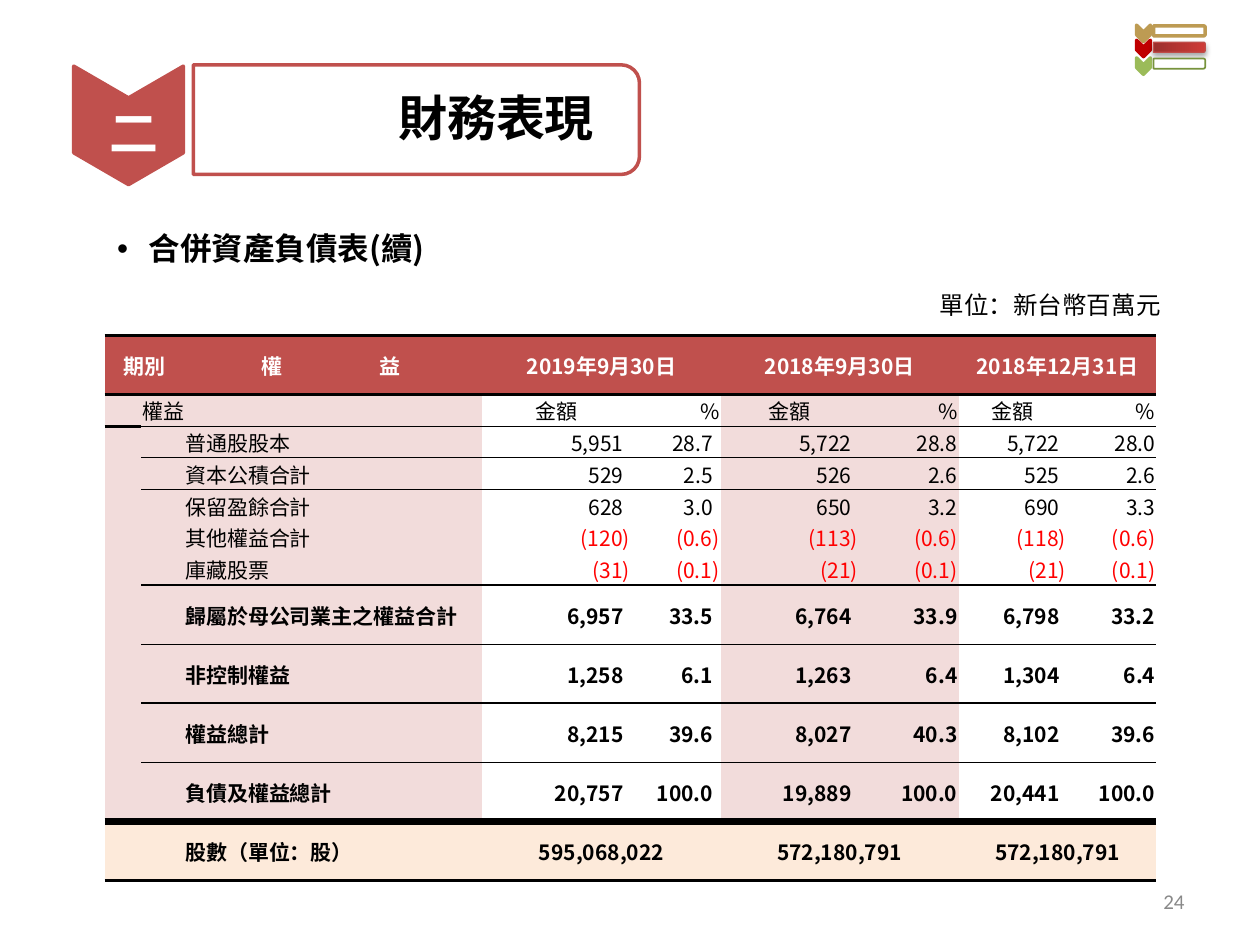
from lxml import etree
from pptx import Presentation
from pptx.dml.color import RGBColor
from pptx.enum import shapes, text
from pptx.oxml import parse_xml
from pptx.oxml.ns import nsdecls, qn
from pptx.util import Inches, Pt

FONT = "Noto Sans CJK SC"
RED, PINK, WHITE, BLACK = "C0504D", "F2DCDB", "FFFFFF", "000000"
CREAM, LOSS = "FDEADA", "FF0000"
LEFT, CENTER, RIGHT = (text.PP_ALIGN.LEFT, text.PP_ALIGN.CENTER, text.PP_ALIGN.RIGHT)
CHEVRON = shapes.MSO_SHAPE.CHEVRON
BAR = shapes.MSO_SHAPE.ROUND_2_SAME_RECTANGLE

COLS = [0.29, 0.34, 2.37, 1.18, 0.71, 1.1, 0.79, 0.86, 0.71]
COL_FILLS = [PINK] * 3 + [WHITE] * 2 + [PINK] * 2 + [WHITE] * 2
HEADER = ["期別", "", "權\t益", "2019年9月30日", "", "2018年9月30日", "", "2018年12月31日", ""]
SUBHEAD = ["", "權益", ""] + ["金額", "%"] * 3
ITEMS = [
    ("普通股股本", "5,951", "28.7", "5,722", "28.8", "5,722", "28.0"),
    ("資本公積合計", "529", "2.5", "526", "2.6", "525", "2.6"),
    ("保留盈餘合計", "628", "3.0", "650", "3.2", "690", "3.3"),
    ("其他權益合計", "(120)", "(0.6)", "(113)", "(0.6)", "(118)", "(0.6)"),
    ("庫藏股票", "(31)", "(0.1)", "(21)", "(0.1)", "(21)", "(0.1)"),
    ("歸屬於母公司業主之權益合計", "6,957", "33.5", "6,764", "33.9", "6,798", "33.2"),
    ("非控制權益", "1,258", "6.1", "1,263", "6.4", "1,304", "6.4"),
    ("權益總計", "8,215", "39.6", "8,027", "40.3", "8,102", "39.6"),
    ("負債及權益總計", "20,757", "100.0", "19,889", "100.0", "20,441", "100.0"),
]
SHARES = ["", "", "股數（單位：股）", "595,068,022", "", "572,180,791", "", "572,180,791", ""]
ROWS = [HEADER, SUBHEAD] + [["", "", *item] for item in ITEMS] + [SHARES]
LAST = len(ROWS) - 1
HEIGHTS = [0.47] + [0.24] * 6 + [0.47] * 5
RULES = {-1: 2, 0: 2, 1: 0.5, 2: 0.5, 6: 1, 7: 0.5, 8: 1, 9: 1, 10: 4, 11: 2}
FULL_RULES = (-1, 0, 10, 11)
MERGES = [(0, 0), (1, 1)] + [(r, c) for r in (0, LAST) for c in (3, 5, 7)]
PADDED_COLS = (3, 4, 5, 7)

ICON_CHEVRONS = [(0.21, "BD9B53"), (0.47, "9BBB59"), (0.33, "C00000")]
ICON_BARS = [(0.04, None, "BD9B53", 2), (0.17, RED, "BF4C48", 0.75), (0.3, WHITE, "77933C", 1)]


def rgb(value):
    return RGBColor.from_string(value)


def write(tf, words, size, color=BLACK, bold=False, align=LEFT, font=FONT, **para):
    p = tf.paragraphs[0]
    p.alignment = align
    for name, value in para.items():
        setattr(p, name, value)
    if not words:
        etree.SubElement(p._p, qn("a:endParaRPr"), sz=str(size * 100))
        return p
    r = p.add_run()
    r.text = words
    for name, value in {"size": Pt(size), "bold": bold, "name": font}.items():
        setattr(r.font, name, value)
    r.font.color.rgb = rgb(color)
    etree.SubElement(r._r.get_or_add_rPr(), qn("a:ea"), typeface=font)
    return p


def frame(sp, margins=(0.1, 0.05, 0.1, 0.05), anchor=text.MSO_ANCHOR.TOP):
    tf = sp.text_frame
    tf.word_wrap = True
    tf.auto_size = text.MSO_AUTO_SIZE.NONE
    tf.vertical_anchor = anchor
    for side, value in zip(("left", "top", "right", "bottom"), margins):
        setattr(tf, "margin_" + side, Inches(value))
    return tf


def place(sp, *box):
    for name, value in zip(("left", "top", "width", "height"), box):
        setattr(sp, name, Inches(value))


def add_box(s, *box):
    return s.shapes.add_textbox(*map(Inches, box))


def add_turned(s, kind, box, fill, line, width):
    sp = s.shapes.add_shape(kind, *map(Inches, box))
    sp.rotation = 90
    sp.shadow.inherit = False
    if fill:
        sp.fill.solid()
        sp.fill.fore_color.rgb = rgb(fill)
    else:
        sp.fill.background()
    sp.line.color.rgb = rgb(line)
    sp.line.width = Pt(width)
    return sp


def shade(sp):
    sp.fill.gradient()
    sp.fill.gradient_angle = 90
    for stop, color in zip(sp.fill.gradient_stops, ("9C2F2D", "CE3B37")):
        stop.color.rgb = rgb(color)
    effects = sp._element.spPr.find(qn("a:effectLst"))
    effects.append(parse_xml(
        f'<a:outerShdw {nsdecls("a")} blurRad="{Pt(3.1)}" dist="{Pt(1.8)}" dir="5400000">'
        '<a:srgbClr val="000000"><a:alpha val="35000"/></a:srgbClr></a:outerShdw>'))


def add_border(cell, tag, width):
    ln = parse_xml(
        f'<a:{tag} {nsdecls("a")} w="{Pt(width)}"><a:solidFill>'
        f'<a:srgbClr val="{BLACK}"/></a:solidFill></a:{tag}>')
    tcPr = cell._tc.get_or_add_tcPr()
    tcPr.insert(len(tcPr.findall(qn("a:lnT"))), ln)


def fill_cell(cell, row, col):
    words = ROWS[row][col]
    loss = words.startswith("(")
    number = 1 < row < LAST and col > 2
    align = LEFT
    if number or words == "%":
        align = RIGHT
    elif row == 0 and col != 2 or col > 2:
        align = CENTER
    cell.vertical_anchor = text.MSO_ANCHOR.MIDDLE
    cell.margin_left = Inches(0.62 if (row, col) == (0, 2) else 0.01)
    cell.margin_right = Inches(0.06 if number and col in PADDED_COLS and not loss else 0.01)
    cell.margin_top, cell.margin_bottom = Inches(0.01), 0
    color = WHITE if row == 0 else LOSS if loss else BLACK
    p = write(cell.text_frame, words, 12, color, row == 0 or row > 6, align)
    if "\t" in words:
        tabs = etree.SubElement(p._p.get_or_add_pPr(), qn("a:tabLst"))
        etree.SubElement(tabs, qn("a:tab"), pos=str(Inches(0.93)), algn="l")
    cell.fill.solid()
    cell.fill.fore_color.rgb = rgb({0: RED, LAST: CREAM}.get(row, COL_FILLS[col]))
    for tag, rule in (("lnT", row - 1), ("lnB", row)):
        if rule in RULES and (col > 0 or rule in FULL_RULES):
            add_border(cell, tag, RULES[rule])


def add_balance_sheet(s):
    box = (0.83, 2.66, sum(COLS), sum(HEIGHTS))
    table = s.shapes.add_table(len(ROWS), len(COLS), *map(Inches, box)).table
    tblPr = table._tbl.tblPr
    tblPr.find(qn("a:tableStyleId")).text = "{2D5ABB26-0587-4C30-8999-92F81FD0307C}"
    table.first_row = table.horz_banding = False
    for column, width in zip(table.columns, COLS):
        column.width = Inches(width)
    for row, height in enumerate(HEIGHTS):
        table.rows[row].height = Inches(height)
        for col in range(len(COLS)):
            fill_cell(table.cell(row, col), row, col)
    for row, col in MERGES:
        table.cell(row, col).merge(table.cell(row, col + 1))


def main():
    prs = Presentation()
    prs.slide_width, prs.slide_height = Inches(10), Inches(7.5)
    s = prs.slides.add_slide(prs.slide_layouts[1])
    title, body = s.placeholders
    middle = text.MSO_ANCHOR.MIDDLE

    place(body, 0.83, 1.77, 5.59, 0.4)
    p = write(frame(body), "合併資產負債表(續)", 18, bold=True, space_before=Pt(0))
    pPr = p._p.get_or_add_pPr()
    pPr.set("marL", str(Inches(0.25)))
    pPr.set("indent", str(-Inches(0.25)))
    write(frame(add_box(s, 7.36, 2.25, 1.97, 0.39)), "單位：新台幣百萬元", 14)
    add_balance_sheet(s)

    banner = add_turned(s, BAR, (2.87, -0.82, 0.87, 3.54), WHITE, RED, 2)
    place(title, 1.54, 0.52, 4.66, 0.87)
    write(frame(title, (1.62, 0.02, 0.02, 0.02), middle), "財務表現", 28, bold=True, line_spacing=0.9)
    banner._element.addnext(title._element)
    marker = add_turned(s, CHEVRON, (0.55, 0.56, 0.94, 0.87), RED, RED, 2)
    marker.adjustments[0] = 0.29
    number = frame(add_box(s, 0.35, 0.85, 1.42, 0.45), (0.02,) * 4, middle)
    write(number, "二", 28, WHITE, True, CENTER, line_spacing=0.9)

    for top, color in ICON_CHEVRONS:
        add_turned(s, CHEVRON, (9.01, top, 0.13, 0.11), color, color, 2)
    for top, fill, line, width in ICON_BARS:
        bar = add_turned(s, BAR, (9.32, top, 0.08, 0.41), fill, line, width)
        if fill == RED:
            shade(bar)

    page = frame(add_box(s, 7.17, 6.95, 2.33, 0.4), anchor=middle)
    write(page, "24", 12, "898989", align=RIGHT, font="Calibri")
    prs.save("out.pptx")


if __name__ == "__main__":
    main()
